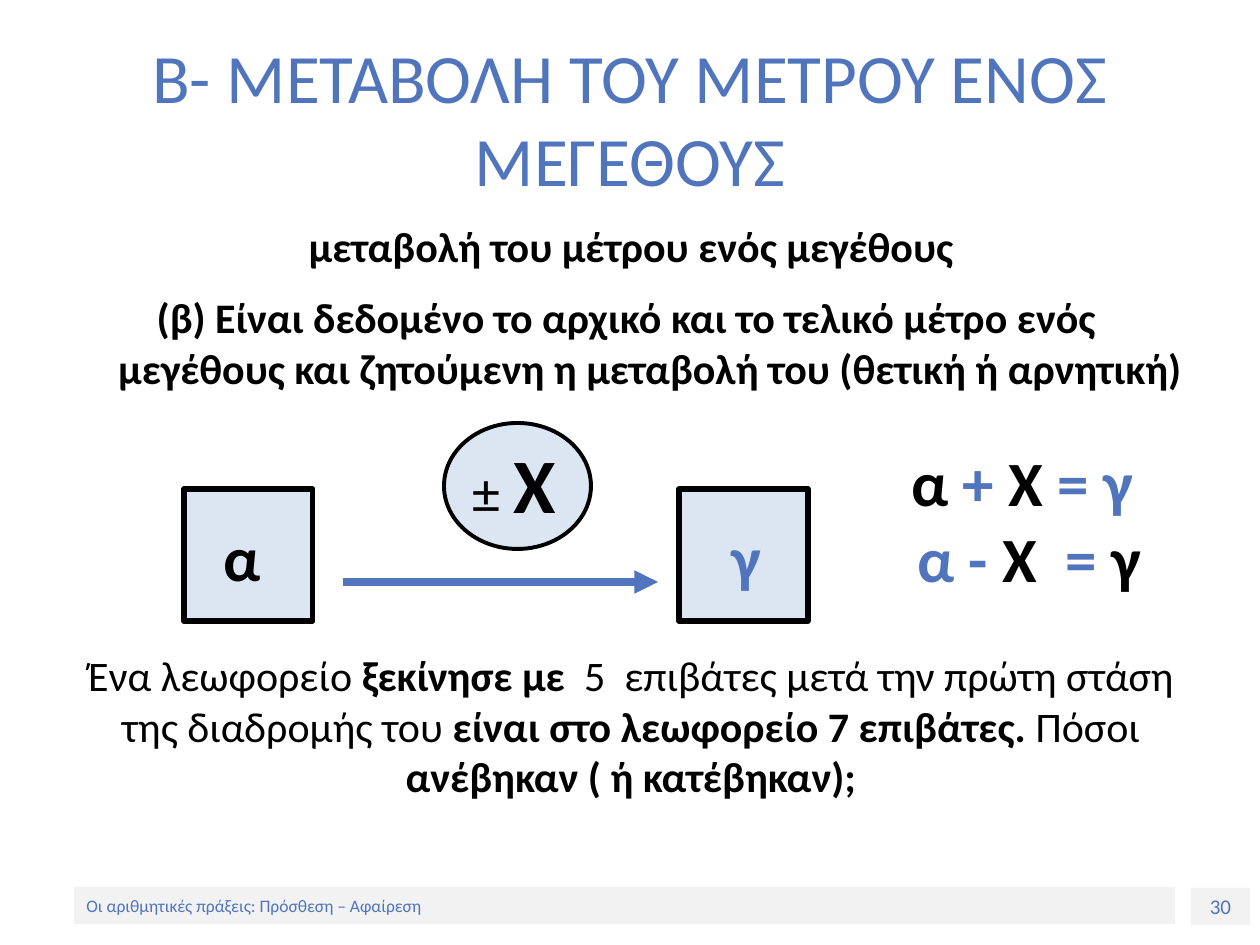
from lxml.etree import SubElement
from pptx import Presentation
from pptx.dml.color import RGBColor
from pptx.enum.shapes import MSO_CONNECTOR, MSO_SHAPE
from pptx.enum.text import MSO_ANCHOR, MSO_AUTO_SIZE, PP_ALIGN
from pptx.oxml.ns import qn
from pptx.util import Emu, Pt

PX_PER_INCH = 126
FONT = "Calibri"
BLACK = RGBColor(0x00, 0x00, 0x00)
BLUE = RGBColor(0x50, 0x75, 0xBC)
PALE_BLUE = RGBColor(0xDC, 0xE6, 0xF2)
GREY = RGBColor(0xF2, 0xF2, 0xF2)
BREAK = None


def px(n):
    return Emu(round(n * 914400 / PX_PER_INCH))


def place(s, box):
    s.left, s.top, s.width, s.height = map(px, box)


def write(p, runs, align=PP_ALIGN.CENTER):
    """Fill a paragraph with (text, size, colour, bold) runs."""
    p.alignment = align
    for run in runs:
        if run is BREAK:
            p.add_line_break()
            continue
        text, size, color, bold = run
        r = p.add_run()
        r.text = text
        r.font.name = FONT
        r.font.size = Pt(size)
        r.font.color.rgb = color
        r.font.bold = bold


def add_panel(sp, kind, box, fill, line_width=0):
    s = sp.add_shape(kind, *map(px, box))
    s.shadow.inherit = False
    s.fill.solid()
    s.fill.fore_color.rgb = fill
    if line_width:
        s.line.color.rgb = BLACK
        s.line.width = Pt(line_width)
    else:
        s.line.fill.background()
    return s


def add_bar(sp, box, text, size, align):
    s = add_panel(sp, MSO_SHAPE.RECTANGLE, box, GREY)
    tf = s.text_frame
    tf.vertical_anchor = MSO_ANCHOR.MIDDLE
    write(tf.paragraphs[0], [(text, size, BLUE, False)], align)


def add_label(sp, box, runs, wrap=True, anchor=MSO_ANCHOR.TOP):
    tf = sp.add_textbox(*map(px, box)).text_frame
    tf.word_wrap = wrap
    tf.vertical_anchor = anchor
    write(tf.paragraphs[0], runs)


def add_arrow(sp, x1, x2, y):
    c = sp.add_connector(MSO_CONNECTOR.STRAIGHT, px(x1), px(y), px(x2), px(y))
    c.line.color.rgb = BLUE
    c.line.width = Pt(4.5)
    SubElement(c.line._get_or_add_ln(), qn("a:tailEnd"), type="triangle")
    SubElement(c._element.spPr, qn("a:effectLst"))


def fill_title(s, box, text):
    place(s, box)
    tf = s.text_frame
    tf.auto_size = MSO_AUTO_SIZE.NONE
    tf.vertical_anchor = MSO_ANCHOR.MIDDLE
    write(tf.paragraphs[0], [(text, 39.6, BLUE, False)])


def fill_body(s, box, paragraphs):
    """Each paragraph is (space before in points, hanging indent, runs)."""
    place(s, box)
    tf = s.text_frame
    tf.auto_size = MSO_AUTO_SIZE.NONE
    for i, (space, hang, runs) in enumerate(paragraphs):
        p = tf.add_paragraph() if i else tf.paragraphs[0]
        write(p, runs)
        p.space_before = Pt(space)
        pPr = p._p.get_or_add_pPr()
        pPr.set("marL", str(px(hang)))
        pPr.set("indent", str(-px(hang)))
        SubElement(pPr, qn("a:buNone"))


def body_run(text, bold=True):
    return text, 24, BLACK, bold


def main():
    prs = Presentation()
    prs.slide_width, prs.slide_height = px(1260), px(945)
    slide = prs.slides.add_slide(prs.slide_layouts[1])
    sp = slide.shapes

    # Title and body text; the diagram sits in the gap before the problem
    fill_title(sp.title, (63, 38, 1134, 158),
               "Β- ΜΕΤΑΒΟΛΗ ΤΟΥ ΜΕΤΡΟΥ ΕΝΟΣ ΜΕΓΕΘΟΥΣ")
    fill_body(slide.placeholders[1], (64, 214, 1134, 624), [
        (12, 0, [body_run("μεταβολή του μέτρου ενός μεγέθους")]),
        (12, 38, [
            body_run("(β) Είναι δεδομένο το αρχικό και το τελικό μέτρο ενός "),
            BREAK,
            body_run("μεγέθους και ζητούμενη η μεταβολή του (θετική ή αρνητική)"),
        ]),
        (147, 0, [
            body_run("Ένα λεωφορείο ", False),
            body_run("ξεκίνησε με  "),
            body_run("5  επιβάτες μετά την πρώτη στάση της διαδρομής του ", False),
            body_run("είναι στο λεωφορείο 7 επιβάτες. "),
            body_run("Πόσοι ", False),
            body_run("ανέβηκαν ( ή κατέβηκαν);"),
        ]),
    ])

    # Diagram: start square, change, end square
    for x, label_x, letter, color in ((184, 203, "α", BLACK),
                                      (679, 707, "γ", BLUE)):
        add_panel(sp, MSO_SHAPE.RECTANGLE, (x, 489, 129, 132), PALE_BLUE, 3)
        add_label(sp, (label_x, 512, 79, 88), [(letter, 36, color, True)])
    add_panel(sp, MSO_SHAPE.OVAL, (444, 423, 147, 126), PALE_BLUE, 2.25)
    add_label(sp, (441, 430, 147, 106),
              [("± ", 32, BLACK, False), ("Χ", 44, BLACK, True)])
    add_arrow(sp, 343, 658, 582)

    # Equations: known terms and unknown terms differ in colour
    first = [("α ", BLACK), ("+ ", BLUE), ("Χ ", BLACK), ("= γ", BLUE)]
    second = [(" α - ", BLUE), ("Χ  ", BLACK), ("= ", BLUE), ("γ", BLACK)]
    lines = [[(text, 36, color, True) for text, color in line]
             for line in (first, second)]
    add_label(sp, (886, 437, 272, 165), lines[0] + [BREAK] + lines[1],
              wrap=False, anchor=MSO_ANCHOR.MIDDLE)

    # Footer and slide number
    add_bar(sp, (74, 887, 1101, 37),
            "Οι αριθμητικές πράξεις: Πρόσθεση – Αφαίρεση", 10, PP_ALIGN.LEFT)
    add_bar(sp, (1191, 888, 59, 37), "30", 12, PP_ALIGN.CENTER)

    prs.save("out.pptx")


if __name__ == "__main__":
    main()
